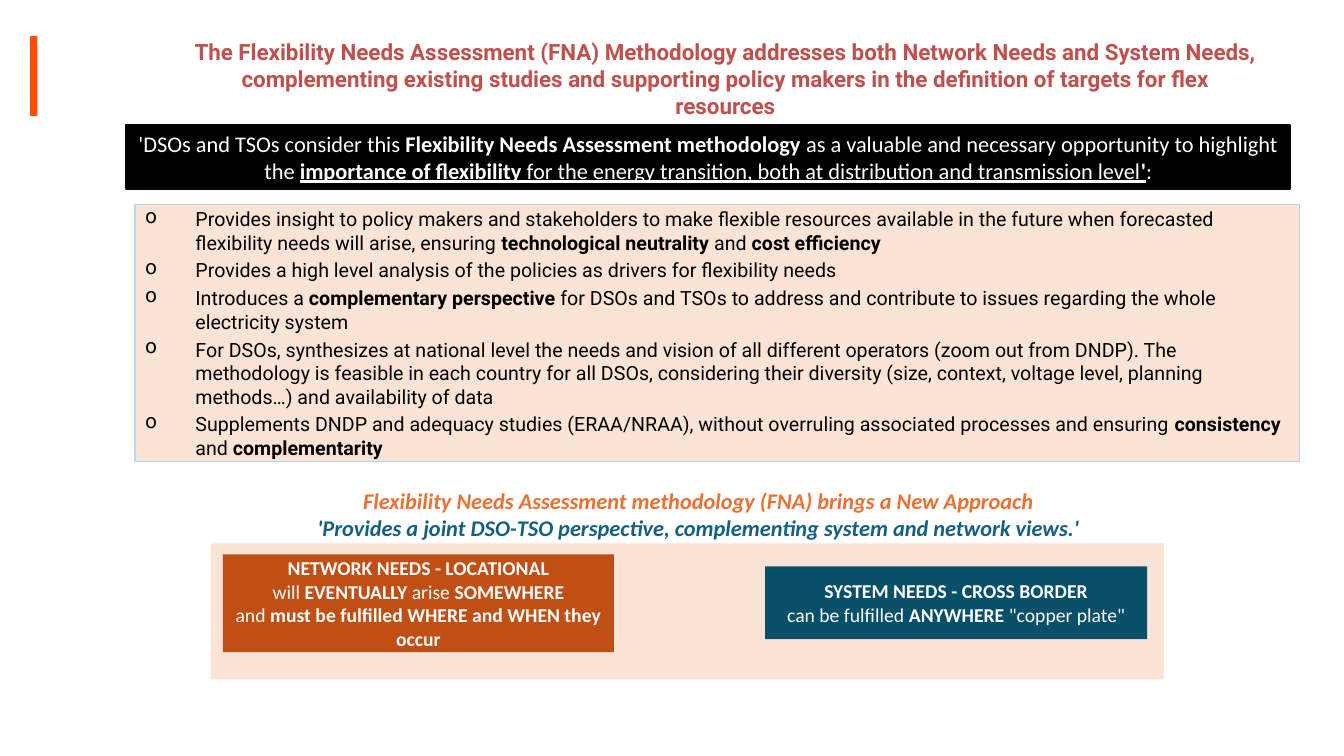
from lxml import etree
from pptx import Presentation
from pptx import util as u
from pptx.dml.color import RGBColor
from pptx.enum import shapes, text
from pptx.oxml.ns import qn

WIDTH, HEIGHT = u.Inches(13.33), u.Inches(7.5)
BLACK = RGBColor(0x00, 0x00, 0x00)
WHITE = RGBColor(0xFF, 0xFF, 0xFF)
ACCENT = RGBColor(0xFF, 0x4D, 0x00)
RED = RGBColor(0xC0, 0x50, 0x4D)
PEACH = RGBColor(0xFB, 0xE3, 0xD6)
PALE_BLUE = RGBColor(0xB8, 0xD4, 0xF0)
ORANGE = RGBColor(0xE9, 0x71, 0x32)
BLUE = RGBColor(0x15, 0x60, 0x82)
TEAL = RGBColor(0x08, 0x4F, 0x6A)
RUST = RGBColor(0xC0, 0x4F, 0x15)

TITLE = [[("The Flexibility Needs Assessment (FNA) Methodology addresses both Network Needs "
           "and System Needs, complementing existing studies and supporting policy makers in "
           "the definition of targets for flex resources", "b")]]
CLAIM = [[("'DSOs and TSOs consider this ", ""),
          ("Flexibility Needs Assessment methodology ", "b"),
          ("as a valuable and necessary opportunity to highlight the ", ""),
          ("importance of flexibility", "bu"),
          (" for the energy transition, both at distribution and transmission level", "u"),
          ("'", "bu"), (":", "")]]
BENEFITS = [
    [("Provides insight to policy makers and stakeholders to make flexible resources available "
      "in the future when forecasted flexibility needs will arise, ensuring ", ""),
     ("technological neutrality ", "b"), ("and ", ""), ("cost efficiency", "b")],
    [("Provides a high level analysis of the policies as drivers for flexibility needs", "")],
    [("Introduces a ", ""), ("complementary perspective ", "b"),
     ("for DSOs and TSOs to address and contribute to issues regarding the whole "
      "electricity system", "")],
    [("For DSOs, synthesizes at national level the needs and vision of all different operators "
      "(zoom out from DNDP). The methodology is feasible in each country for all DSOs, "
      "considering their diversity (size, context, voltage level, planning methods…) and "
      "availability of data", "")],
    [("Supplements DNDP and adequacy studies (ERAA/NRAA), without overruling associated "
      "processes and ensuring ", ""),
     ("consistency", "b"), (" and ", ""), ("complementarity", "b")],
]
APPROACH = [[("Flexibility Needs Assessment methodology (FNA) brings a New Approach", "bi")],
            [("'Provides a joint DSO-TSO perspective, complementing system and network views.'",
              "bi")]]
SYSTEM = [[("SYSTEM NEEDS - CROSS BORDER", "b")],
          [("can be fulfilled ", ""), ("ANYWHERE ", "b"), ('"copper plate"', "")]]
NETWORK = [[("NETWORK NEEDS - LOCATIONAL", "b")],
           [("will ", ""), ("EVENTUALLY ", "b"), ("arise ", ""), ("SOMEWHERE", "b")],
           [("and ", ""), ("must be fulfilled WHERE and WHEN they occur", "b")]]


def area(left, top, width, height):
    """Turn percentages of the slide into lengths."""
    return [int(share * side / 100) for share, side in
            zip((left, top, width, height), (WIDTH, HEIGHT, WIDTH, HEIGHT))]


def add_panel(s, box, fill, line=None, weight=1):
    """Draw a flat rectangle."""
    sp = s.shapes.add_shape(shapes.MSO_SHAPE.RECTANGLE, *area(*box))
    sp.shadow.inherit = False
    sp.fill.solid()
    sp.fill.fore_color.rgb = fill
    if line is None:
        sp.line.fill.background()
    else:
        sp.line.color.rgb = line
        sp.line.width = u.Pt(weight)
    return sp


def add_bullet(p):
    """Give a paragraph a hanging round bullet."""
    pPr = p._p.get_or_add_pPr()
    pPr.set("marL", str(u.Inches(0.5)))
    pPr.set("indent", str(-u.Inches(0.5)))
    etree.SubElement(pPr, qn("a:buChar")).set("char", "o")


def write(sp, paragraphs, size, font, colors, anchor=text.MSO_ANCHOR.TOP, bullets=False):
    """Fill a shape with paragraphs of styled runs, cycling through the colours."""
    tf = sp.text_frame
    tf.word_wrap = True
    tf.auto_size = text.MSO_AUTO_SIZE.NONE
    tf.vertical_anchor = anchor
    for i, runs in enumerate(paragraphs):
        p = tf.paragraphs[0] if i == 0 else tf.add_paragraph()
        p.alignment = text.PP_ALIGN.LEFT if bullets else text.PP_ALIGN.CENTER
        if bullets:
            add_bullet(p)
            p.space_before = u.Pt(3 if i else 0)
        for words, style in runs:
            r = p.add_run()
            r.text = words
            r.font.size = u.Pt(size)
            r.font.name = font
            r.font.color.rgb = colors[i % len(colors)]
            r.font.bold = "b" in style
            r.font.italic = "i" in style
            r.font.underline = "u" in style


def add_title(s):
    """Place and format the slide title."""
    sp = s.shapes.title
    sp.left, sp.top, sp.width, sp.height = area(13.58, 4.4, 80.78, 8.53)
    write(sp, TITLE, 16, "Roboto", [RED])


def main():
    """Build the slide and save it."""
    prs = Presentation()
    prs.slide_width, prs.slide_height = WIDTH, HEIGHT
    s = prs.slides.add_slide(prs.slide_layouts[5])
    middle = text.MSO_ANCHOR.MIDDLE

    add_panel(s, (2.25, 4.8, 0.53, 10.53), ACCENT)
    add_title(s)
    benefits = add_panel(s, (10.05, 27.07, 86.63, 34), PEACH, PALE_BLUE)
    write(benefits, BENEFITS, 14, "Roboto", [BLACK], middle, bullets=True)
    claim = add_panel(s, (9.38, 16.53, 86.63, 8.53), BLACK, BLACK, 1.5)
    write(claim, CLAIM, 16, "Calibri", [WHITE])
    approach = s.shapes.add_textbox(*area(14.78, 63.73, 74.4, 8.53))
    write(approach, APPROACH, 16, "Calibri", [ORANGE, BLUE])

    add_panel(s, (15.68, 71.87, 70.95, 18), PEACH)
    for box, fill, words in (((56.93, 74.93, 28.43, 9.6), TEAL, SYSTEM),
                             ((16.58, 73.33, 29.1, 12.93), RUST, NETWORK)):
        write(add_panel(s, box, fill), words, 14, "Calibri", [WHITE], middle)

    prs.save("out.pptx")


if __name__ == "__main__":
    main()
